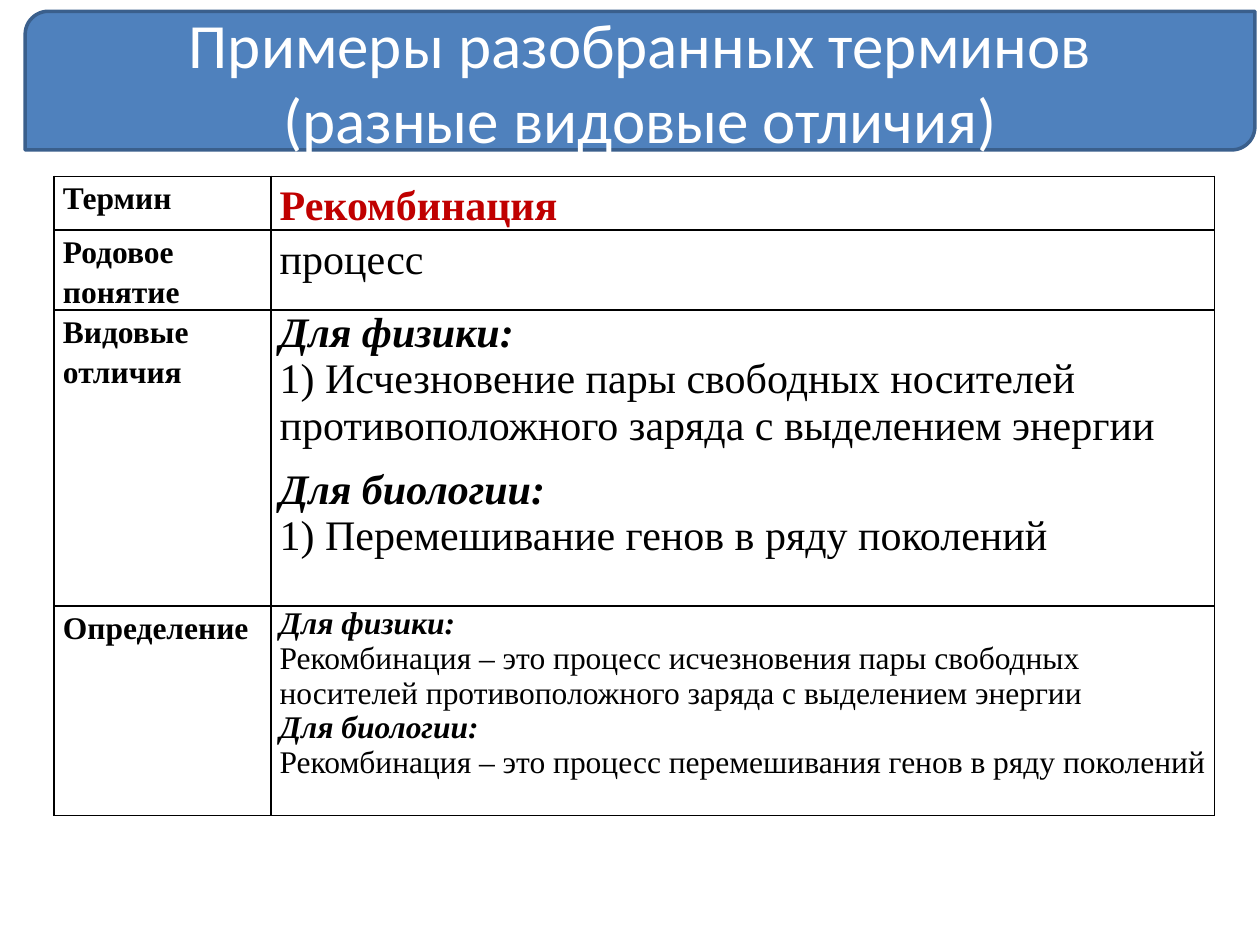
from lxml.etree import SubElement
from pptx import Presentation
from pptx.dml.color import RGBColor
from pptx.enum.shapes import MSO_SHAPE
from pptx.enum.text import MSO_ANCHOR, MSO_AUTO_SIZE, PP_ALIGN
from pptx.oxml.ns import qn
from pptx.util import Inches, Pt

# Content: each row is a label, its height and the lines of its value
TITLE = ["Примеры разобранных терминов", "(разные видовые отличия)"]
HEAD = dict(bold=True, italic=True)
BIG = dict(size="big")
ROWS = [
    ("Термин", 0.42, [
        ("Рекомбинация", dict(BIG, bold=True, color="term", lead=1.15))]),
    ("Родовое понятие", 0.63, [("процесс", dict(BIG, lead=1.15))]),
    ("Видовые отличия", 2.35, [
        ("Для физики:", HEAD | BIG),
        ("1) Исчезновение пары свободных носителей "
         "противоположного заряда с выделением энергии", BIG),
        ("Для биологии:", dict(HEAD, size="big", gap=10)),
        ("1) Перемешивание генов в ряду поколений", BIG)]),
    ("Определение", 1.66, [
        ("Для физики:", HEAD),
        ("Рекомбинация – это процесс исчезновения пары свободных "
         "носителей противоположного заряда с выделением энергии", {}),
        ("Для биологии:", HEAD),
        ("Рекомбинация – это процесс перемешивания генов в ряду "
         "поколений", {})]),
]
COLS = [1.72, 7.49]
BANNER = [Inches(n) for n in (0.2, 0.09, 9.76, 1.1)]

THEME = {
    "color": dict(text="000000", term="C00000", title="FFFFFF",
                  fill="4F81BD", edge="3A5F8C", grid="000000"),
    "size": dict(title=36, big=24, body=18),
    "font": dict(title="Calibri", body="Times New Roman"),
}


def tint(name):
    return RGBColor.from_string(THEME["color"][name])


def write(par, text, size="body", font="body", color="text", bold=False,
          italic=False, align=PP_ALIGN.LEFT, lead=1.0, gap=0):
    par.alignment, par.line_spacing = align, lead
    par.space_before, par.space_after = Pt(gap), Pt(0)
    run = par.add_run()
    run.text = text
    face = run.font
    face.name, face.size = THEME["font"][font], Pt(THEME["size"][size])
    face.bold, face.italic = bold, italic
    face.color.rgb = tint(color)


def fill_frame(frame, lines):
    for i, (text, style) in enumerate(lines):
        par = frame.add_paragraph() if i else frame.paragraphs[0]
        write(par, text, **style)


def add_grid(cell):
    props = cell._tc.get_or_add_tcPr()
    for i, side in enumerate(("lnL", "lnR", "lnT", "lnB")):
        line = SubElement(props, qn("a:" + side), w=str(Pt(1)))
        paint = SubElement(line, qn("a:solidFill"))
        SubElement(paint, qn("a:srgbClr"), val=THEME["color"]["grid"])
        props.insert(i, line)


def add_table(slide):
    high = sum(row[1] for row in ROWS)
    table = slide.shapes.add_table(
        len(ROWS), len(COLS), Inches(0.43), Inches(1.4),
        Inches(sum(COLS)), Inches(high)).table
    table.first_row = table.horz_banding = False
    for col, wide in zip(table.columns, COLS):
        col.width = Inches(wide)
    for row, (label, tall, lines) in zip(table.rows, ROWS):
        row.height = Inches(tall)
        name = [(label, dict(bold=True, lead=1.15))]
        for cell, part in zip(row.cells, (name, lines)):
            cell.margin_left = cell.margin_right = Inches(0.07)
            cell.margin_top = cell.margin_bottom = 0
            cell.fill.background()
            add_grid(cell)
            fill_frame(cell.text_frame, part)


def add_title(slide):
    # Banner behind the title
    shape = slide.shapes.add_shape(MSO_SHAPE.ROUND_2_DIAG_RECTANGLE, *BANNER)
    shape.shadow.inherit = False
    shape.fill.solid()
    shape.fill.fore_color.rgb = tint("fill")
    shape.line.color.rgb = tint("edge")
    shape.line.width = Pt(2)
    # Title placeholder, brought to the front
    title = slide.shapes.title
    title.left, title.top, title.width, title.height = BANNER
    frame = title.text_frame
    frame.word_wrap, frame.auto_size = True, MSO_AUTO_SIZE.NONE
    frame.vertical_anchor = MSO_ANCHOR.MIDDLE
    style = dict(size="title", font="title", color="title",
                 align=PP_ALIGN.CENTER)
    fill_frame(frame, [(text, style) for text in TITLE])
    shape._element.addnext(title._element)


def main():
    deck = Presentation()
    deck.slide_width, deck.slide_height = Inches(10), Inches(7.5)
    slide = deck.slides.add_slide(deck.slide_layouts[5])
    add_table(slide)
    add_title(slide)
    deck.save("out.pptx")


if __name__ == "__main__":
    main()
